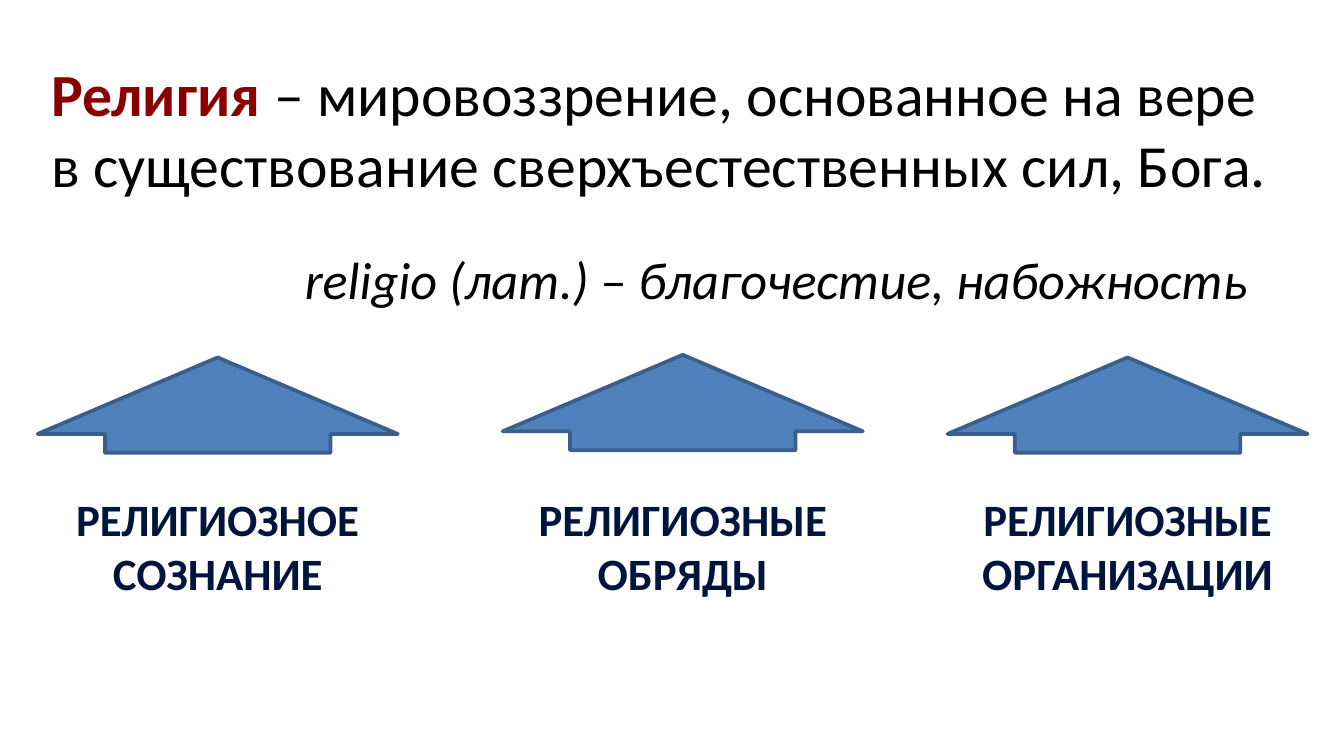
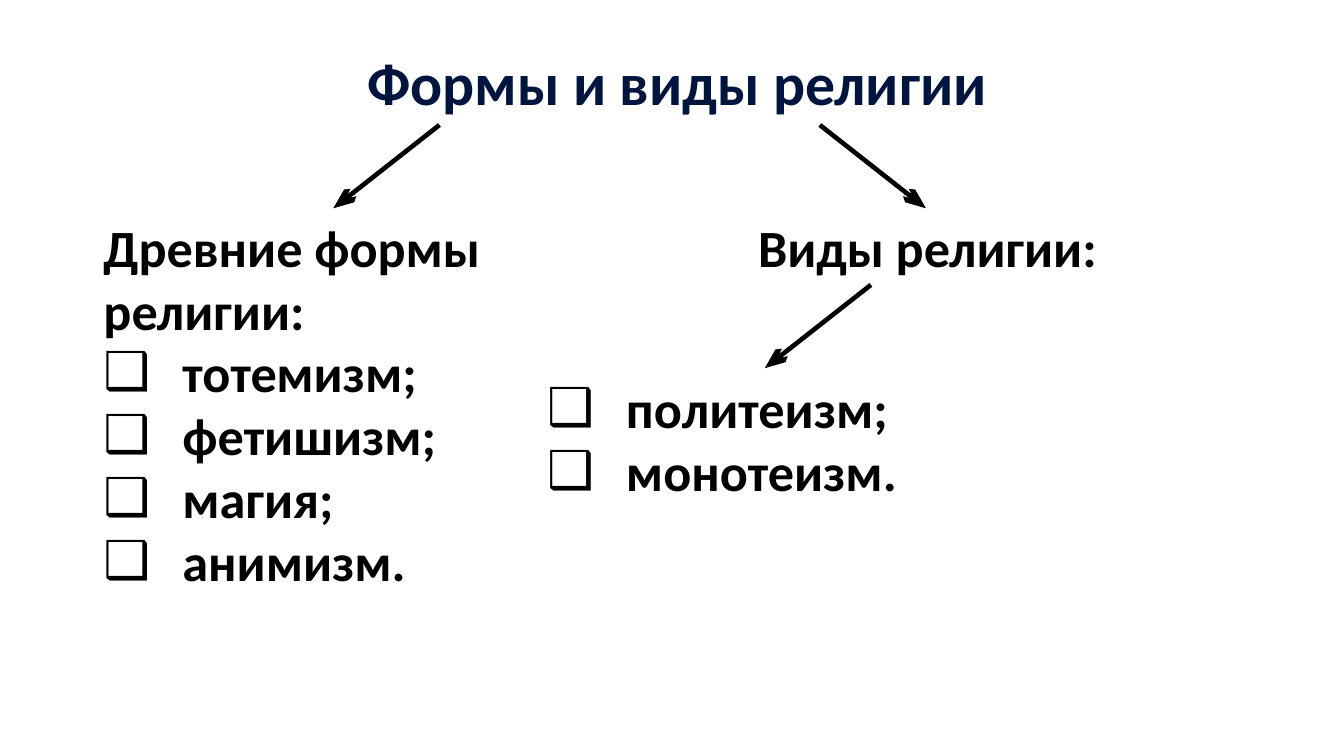
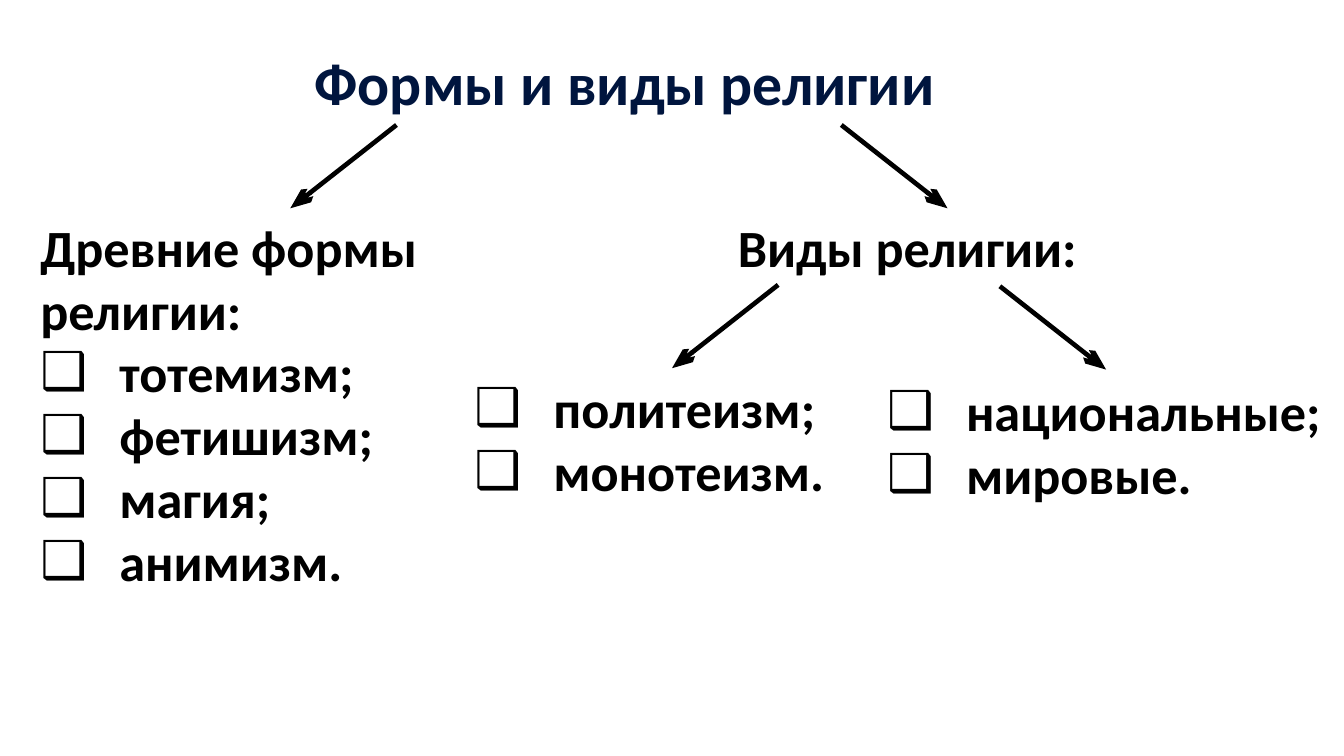
from dataclasses import dataclass

from lxml.etree import SubElement
from pptx import Presentation
from pptx.dml.color import RGBColor
from pptx.enum.shapes import MSO_CONNECTOR, MSO_SHAPE
from pptx.enum.text import MSO_ANCHOR, MSO_AUTO_SIZE, PP_ALIGN
from pptx.oxml.ns import qn
from pptx.util import Inches, Pt


@dataclass(frozen=True)
class Theme:
    font: str = "Calibri"
    black: str = "000000"
    navy: str = "00153E"
    crimson: str = "8A0000"
    arrow_fill: str = "4F81BD"
    arrow_line: str = "3A5F8C"
    title_size: int = 32
    body_size: int = 28
    label_size: int = 24


THEME = Theme()
TITLE_ONLY, COMPARISON = 5, 4  # layouts of the default template
SLIDE_WIDTH = Inches(10)
SLIDE_HEIGHT = SLIDE_WIDTH * 9 // 16

# Content: definition slide
DEFINITION_TERM = "Религия "
DEFINITION_TEXT = ("– мировоззрение, основанное на вере в существование "
                   "сверхъестественных сил, Бога.")
LATIN_ORIGIN = "religio (лат.) – благочестие, набожность"
# label, left and top of its arrow
RELIGION_PARTS = [
    ("РЕЛИГИОЗНОЕ СОЗНАНИЕ", 0.28, 2.66),
    ("РЕЛИГИОЗНЫЕ ОБРЯДЫ", 3.74, 2.64),
    ("РЕЛИГИОЗНЫЕ ОРГАНИЗАЦИИ", 7.05, 2.66),
]

# Content: forms and kinds slides, each group is (heading, bulleted items)
FORMS_TITLE = "Формы и виды религии"
ANCIENT_FORMS = ("Древние формы религии:",
                 [" тотемизм;", " фетишизм;", " магия;", " анимизм."])
KINDS = ("Виды религии:", [])
BY_NUMBER_OF_GODS = (None, [" политеизм;", " монотеизм."])
BY_SPREAD = (None, [" национальные;", " мировые."])

# groups: (group, left, top, width, height); arrows: (start x, start y, direction)
FORMS_SLIDES = [
    {
        "title_left": 0.67,
        "groups": [
            (ANCIENT_FORMS, 0.67, 1.55, 3.15, 2.93),
            (KINDS, 5.54, 1.55, 3.15, 0.57),
            (BY_NUMBER_OF_GODS, 3.97, 2.75, 3.15, 1.04),
        ],
        "arrows": [(3.27, 0.93, -1), (6.1, 0.93, 1), (6.48, 2.12, -1)],
    },
    {
        "title_left": 0.28,
        "groups": [
            (ANCIENT_FORMS, 0.2, 1.55, 3.15, 2.93),
            (KINDS, 5.39, 1.55, 3.15, 0.57),
            (BY_NUMBER_OF_GODS, 3.43, 2.75, 3.15, 1.04),
            (BY_SPREAD, 6.5, 2.77, 3.5, 1.04),
        ],
        "arrows": [(2.95, 0.93, -1), (6.26, 0.93, 1),
                   (5.79, 2.12, -1), (7.44, 2.13, 1)],
    },
]
ARROW_RUN, ARROW_DROP = 0.79, 0.62
LABEL_INSET = 0.1


# Shared text helpers
def place(shape, left, top, width, height):
    shape.left, shape.top = Inches(left), Inches(top)
    shape.width, shape.height = Inches(width), Inches(height)
    frame = shape.text_frame
    frame.word_wrap = True
    frame.auto_size = MSO_AUTO_SIZE.SHAPE_TO_FIT_TEXT
    frame.vertical_anchor = MSO_ANCHOR.TOP
    return frame


def add_run(paragraph, text, size, color=THEME.black, bold=False, italic=False):
    run = paragraph.add_run()
    run.text = text
    font = run.font
    font.name, font.size = THEME.font, Pt(size)
    font.bold, font.italic = bold, italic
    font.color.rgb = RGBColor.from_string(color)


def format_paragraph(paragraph, align=PP_ALIGN.LEFT, bullet=None):
    paragraph.alignment = align
    paragraph.space_before = paragraph.space_after = Pt(0)
    properties = paragraph._p.get_or_add_pPr()
    indent = Inches(0.5) if bullet else 0
    properties.set("marL", str(indent))
    properties.set("indent", str(-indent))
    if bullet:
        SubElement(properties, qn("a:buChar")).set("char", bullet)
    else:
        SubElement(properties, qn("a:buNone"))
    return paragraph


def add_text_box(slide, box, text, align=PP_ALIGN.LEFT, **style):
    frame = place(slide.shapes.add_textbox(0, 0, 0, 0), *box)
    add_run(format_paragraph(frame.paragraphs[0], align), text, **style)


# Parts of the slides
def add_up_arrow(slide, left, top):
    arrow = slide.shapes.add_shape(MSO_SHAPE.UP_ARROW, Inches(left), Inches(top),
                                   Inches(2.68), Inches(0.71))
    arrow.adjustments[0], arrow.adjustments[1] = 0.626, 0.802
    arrow.shadow.inherit = False
    arrow.fill.solid()
    arrow.fill.fore_color.rgb = RGBColor.from_string(THEME.arrow_fill)
    arrow.line.color.rgb = RGBColor.from_string(THEME.arrow_line)
    arrow.line.width = Pt(2)


def add_branch_arrow(slide, start_x, start_y, direction):
    connector = slide.shapes.add_connector(
        MSO_CONNECTOR.STRAIGHT, Inches(start_x), Inches(start_y),
        Inches(start_x + direction * ARROW_RUN), Inches(start_y + ARROW_DROP))
    connector.line.color.rgb = RGBColor.from_string(THEME.black)
    connector.line.width = Pt(2.5)
    arrowhead = SubElement(connector.line._get_or_add_ln(), qn("a:tailEnd"))
    arrowhead.set("type", "arrow")
    arrowhead.set("w", "med")
    arrowhead.set("len", "lg")
    SubElement(connector._element.spPr, qn("a:effectLst"))


def fill_group(placeholder, group, *box):
    frame = place(placeholder, *box)
    heading, items = group
    lines = [(heading, None)] if heading else []
    lines += [(item, "❑") for item in items]
    for index, (text, bullet) in enumerate(lines):
        paragraph = frame.add_paragraph() if index else frame.paragraphs[0]
        format_paragraph(paragraph, bullet=bullet)
        add_run(paragraph, text, THEME.body_size, bold=True)


# Slides
def add_definition_slide(presentation):
    slide = presentation.slides.add_slide(presentation.slide_layouts[TITLE_ONLY])
    frame = place(slide.shapes.title, 0.28, 0.37, 9.45, 1.18)
    paragraph = format_paragraph(frame.paragraphs[0])
    add_run(paragraph, DEFINITION_TERM, THEME.title_size, THEME.crimson, bold=True)
    add_run(paragraph, DEFINITION_TEXT, THEME.title_size)
    add_text_box(slide, (2.17, 1.79, 7.56, 0.57), LATIN_ORIGIN,
                 size=THEME.body_size, italic=True)
    for label, left, top in RELIGION_PARTS:
        add_up_arrow(slide, left, top)
        add_text_box(slide, (left + LABEL_INSET, 3.61, 2.48, 0.91), label,
                     PP_ALIGN.CENTER, size=THEME.label_size,
                     color=THEME.navy, bold=True)


def add_forms_slide(presentation, content):
    slide = presentation.slides.add_slide(presentation.slide_layouts[COMPARISON])
    title, *bodies = list(slide.placeholders)
    frame = place(title, content["title_left"], 0.29, 8.74, 0.64)
    add_run(format_paragraph(frame.paragraphs[0], PP_ALIGN.CENTER), FORMS_TITLE,
            THEME.title_size, THEME.navy, bold=True)
    groups = content["groups"]
    for body, group in zip(bodies, groups):
        fill_group(body, *group)
    for unused in bodies[len(groups):]:
        unused._element.getparent().remove(unused._element)
    for arrow in content["arrows"]:
        add_branch_arrow(slide, *arrow)


def main():
    presentation = Presentation()
    presentation.slide_width = SLIDE_WIDTH
    presentation.slide_height = SLIDE_HEIGHT
    add_definition_slide(presentation)
    for content in FORMS_SLIDES:
        add_forms_slide(presentation, content)
    presentation.save("out.pptx")


if __name__ == "__main__":
    main()
